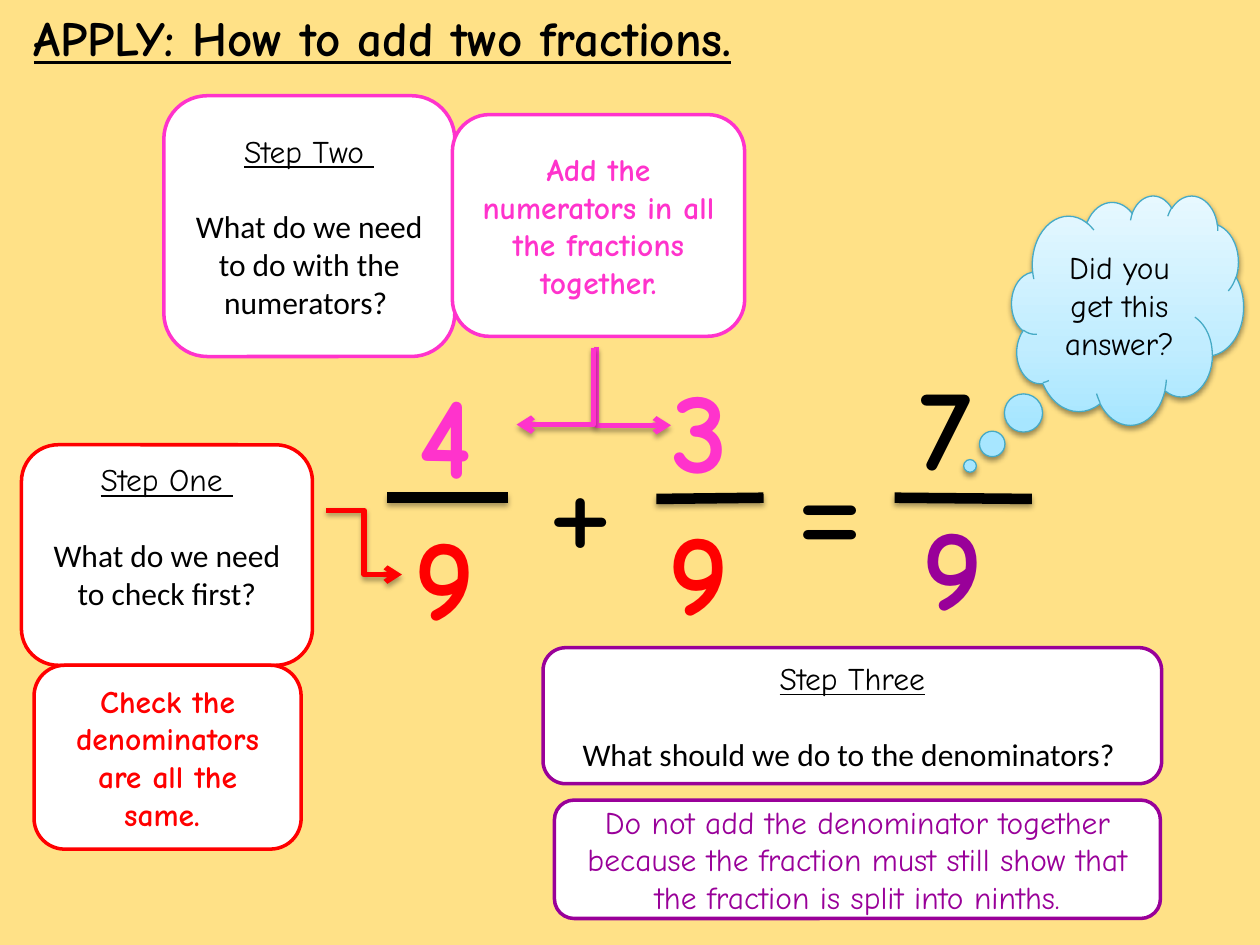
from dataclasses import dataclass

from lxml import etree
from pptx import Presentation
from pptx import util as u
from pptx.dml.color import RGBColor
from pptx.enum import shapes, text
from pptx.oxml.ns import qn
from copy import deepcopy


@dataclass(frozen=True)
class Theme:
    background: str = "FFE187"
    white: str = "FFFFFF"
    ink: str = "000000"
    check: str = "FF0000"
    add: str = "FF33CC"
    keep: str = "990099"
    cloud_line: str = "46AAC5"
    cloud_stops: tuple = ((0, "A7E6FF"), (0.35, "C1EDFF"), (1, "E7F8FF"))
    hand: str = "Comic Neue"
    plain: str = "Calibri"
    title: int = 28
    body: int = 18
    digit: int = 66
    sign: int = 88


THEME = Theme()
COLUMNS, ROWS = 100, 75
CELL = u.Inches(0.1)


def grid(*lengths):
    """Turn counts of grid cells into slide lengths."""
    return [round(length * CELL) for length in lengths]


def rgb(colour):
    return RGBColor.from_string(colour)


def style(para, size, colour, bold=False, underline=False, font=THEME.hand):
    para.font.name = font
    para.font.size = u.Pt(size)
    para.font.bold = bold
    para.font.underline = underline
    para.font.color.rgb = rgb(colour)


def add_shadow(effects, blur, distance, opacity):
    """Put a soft black shadow, falling straight down, in an effect list."""
    shadow = etree.SubElement(
        effects, qn("a:outerShdw"), blurRad=str(u.Pt(blur)),
        dist=str(u.Pt(distance)), dir="5400000", rotWithShape="0")
    colour = etree.SubElement(shadow, qn("a:srgbClr"), val=THEME.ink)
    etree.SubElement(colour, qn("a:alpha"), val=str(opacity * 1000))


def add_label(page, words, area, size, colour, bold=True, underline=False, wrap=True):
    box = page.shapes.add_textbox(*grid(*area))
    frame = box.text_frame
    frame.word_wrap = wrap
    frame.auto_size = text.MSO_AUTO_SIZE.SHAPE_TO_FIT_TEXT
    frame.text = words
    style(frame.paragraphs[0], size, colour, bold, underline)


def add_line(page, kind, ends, colour, width):
    line = page.shapes.add_connector(kind, *grid(*ends))
    line.line.color.rgb = rgb(colour)
    line.line.width = u.Pt(width)
    effects = etree.SubElement(line._element.spPr, qn("a:effectLst"))
    add_shadow(effects, 3.1, 1.8, 35)
    return line


def add_arrow(page, ends, colour, turn=None, flip=False):
    """Add an elbow arrow; one with a turn in degrees has a single corner."""
    arrow = add_line(page, shapes.MSO_CONNECTOR.ELBOW, ends, colour, 3)
    etree.SubElement(arrow.line._get_or_add_ln(), qn("a:tailEnd"), type="arrow")
    if turn is not None:
        properties = arrow._element.spPr
        properties.find(qn("a:prstGeom")).set("prst", "bentConnector2")
        frame = properties.find(qn("a:xfrm"))
        frame.set("rot", str(turn * 60000))
        frame.set("flipH", str(int(flip)))


def add_fraction(page, top, bottom, bar):
    """Add a fraction; top and bottom are (digit, left, top, colour)."""
    digit, left, row, colour = top
    add_label(page, digit, (left, row, 7.7, 12.1), THEME.digit, colour, wrap=False)
    digit, left, row, colour = bottom
    add_label(page, digit, (left, row, 10.5, 12.1), THEME.digit, colour)
    add_line(page, shapes.MSO_CONNECTOR.STRAIGHT, bar, THEME.ink, 6)


def add_bubble(page, kind, area, line_colour, line_width):
    shape = page.shapes.add_shape(kind, *grid(*area))
    shape.shadow.inherit = False
    shape.line.color.rgb = rgb(line_colour)
    shape.line.width = u.Pt(line_width)
    shape.text_frame.word_wrap = True
    shape.text_frame.vertical_anchor = text.MSO_ANCHOR.MIDDLE
    return shape


def fill_text(shape, words, colour, bold=False):
    para = shape.text_frame.paragraphs[0]
    para.text = words
    para.alignment = text.PP_ALIGN.CENTER
    style(para, THEME.body, colour, bold)
    return para


def add_card(page, area, colour):
    card = add_bubble(page, shapes.MSO_SHAPE.ROUNDED_RECTANGLE, area, colour, 2)
    card.fill.solid()
    card.fill.fore_color.rgb = rgb(THEME.white)
    return card


def add_step(page, area, colour, heading, question, rows_below=0):
    card = add_card(page, area, colour)
    para = fill_text(card, heading, THEME.ink)
    para.font.underline = True
    para.space_after = u.Pt(THEME.body * 1.2)
    para = card.text_frame.add_paragraph()
    para.text = question
    para.alignment = text.PP_ALIGN.CENTER
    style(para, THEME.body, THEME.ink, font=THEME.plain)
    card.text_frame.margin_bottom = u.Inches(0.05) + rows_below * CELL


def add_answer(page, area, colour, words, bold=True):
    fill_text(add_card(page, area, colour), words, colour, bold)


def add_cloud(page, area, words):
    cloud = add_bubble(page, shapes.MSO_SHAPE.CLOUD_CALLOUT, area, THEME.cloud_line, 0.75)
    cloud.adjustments[0], cloud.adjustments[1] = -0.68, 0.68
    cloud.fill.gradient()
    cloud.fill.gradient_angle = 90
    stops = cloud._element.spPr.find(".//" + qn("a:gsLst"))
    stops.append(deepcopy(stops[-1]))
    for stop, (position, colour) in zip(cloud.fill.gradient_stops, THEME.cloud_stops):
        stop.position = position
        stop.color.rgb = rgb(colour)
    add_shadow(cloud._element.spPr.find(qn("a:effectLst")), 3.1, 1.6, 38)
    fill_text(cloud, words, THEME.ink)


def main():
    deck = Presentation()
    deck.slide_width, deck.slide_height = grid(COLUMNS, ROWS)
    page = deck.slides.add_slide(deck.slide_layouts[6])
    page.background.fill.solid()
    page.background.fill.fore_color.rgb = rgb(THEME.background)

    add_label(page, "APPLY: How to add two fractions.", (1.7, 0.1, COLUMNS, 5.7),
              THEME.title, THEME.ink, underline=True)

    add_fraction(page, ("4", 32.2, 28.3, THEME.add), ("9", 31.9, 39.6, THEME.check),
                 (40.3, 39.5, 30.7, 39.5))
    add_fraction(page, ("3", 52.3, 27.9, THEME.add), ("9", 52.1, 39.2, THEME.check),
                 (60.6, 39.5, 52.1, 39.6))
    add_fraction(page, ("7", 72, 27.7, THEME.ink), ("9", 72.2, 38.8, THEME.keep),
                 (81.9, 39.6, 71, 39.5))
    for sign, left in (("+", 42.4), ("=", 62.1)):
        add_label(page, sign, (left, 31.75, 7.9, 15.8), THEME.sign, THEME.ink, bold=False)

    add_arrow(page, (25.9, 40.5, 31.9, 45.6), THEME.check)
    add_arrow(page, (47.2, 27.7, 53.4, 33.6), THEME.add, turn=270, flip=True)
    add_arrow(page, (41, 27.6, 47.1, 33.7), THEME.add, turn=90)

    add_step(page, (43.1, 51.4, 49.1, 10.8), THEME.keep,
             "Step Three", "What should we do to the denominators? ")
    add_step(page, (13, 7.6, 23.1, 20.7), THEME.add,
             "Step Two ", "What do we need to do with the numerators? ")
    add_step(page, (1.7, 35.3, 23.1, 17.5), THEME.check,
             "Step One ", "What do we need to check first?", rows_below=3)

    add_answer(page, (2.7, 52.8, 21.2, 14.6), THEME.check,
               "Check the denominators are all the same. ")
    add_answer(page, (35.9, 9.1, 23.2, 17.6), THEME.add,
               "Add the numerators in all the fractions together.")
    add_answer(page, (44, 63.5, 48.1, 9.4), THEME.keep,
               "Do not add the denominator together because the fraction must "
               "still show that the fraction is split into ninths.", bold=False)
    add_cloud(page, (80.3, 15.5, 18.4, 18.2), "Did you get this answer?")

    deck.save("out.pptx")


if __name__ == "__main__":
    main()
